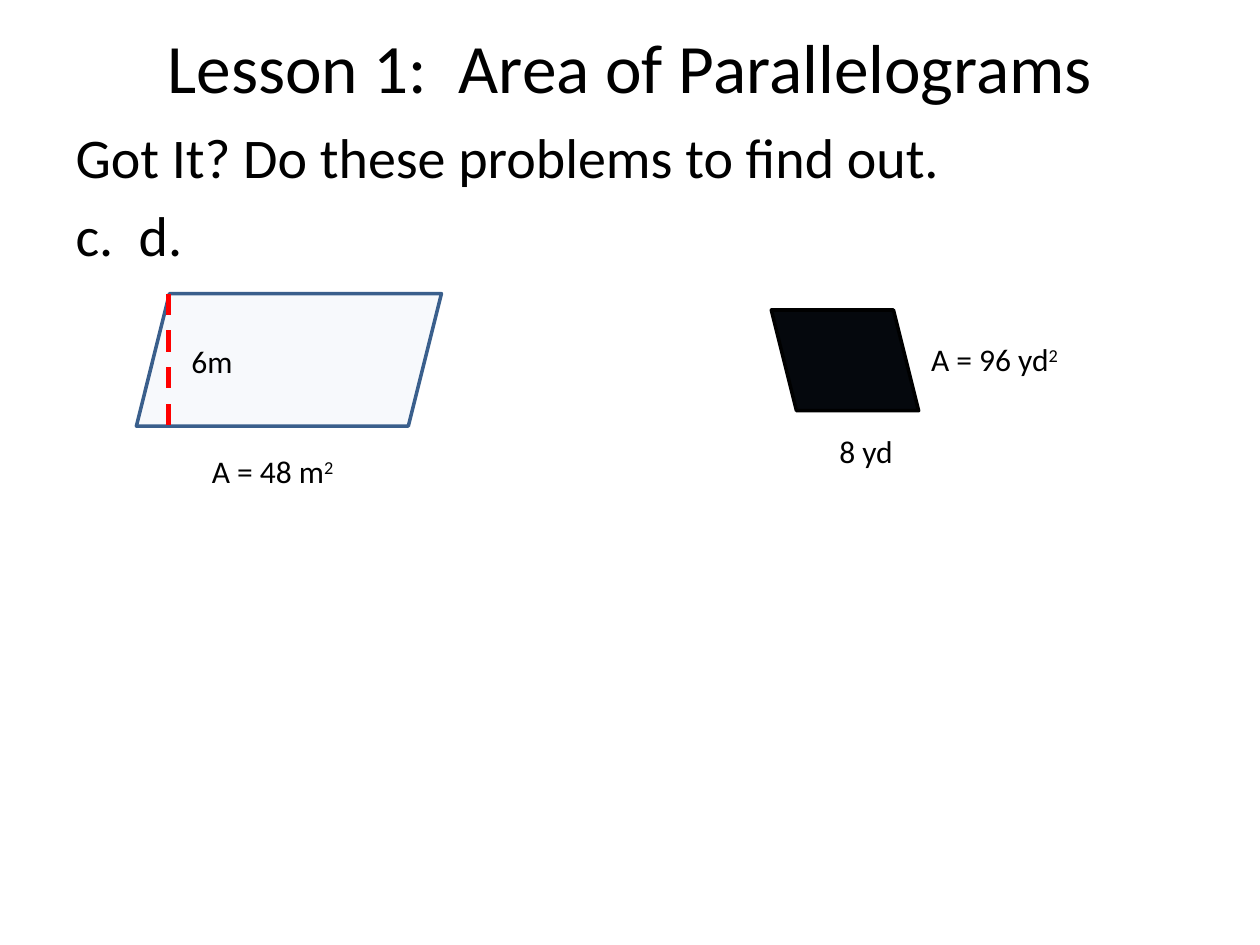
import pptx
import pptx.dml.color
import pptx.enum.dml
import pptx.enum.shapes
import pptx.enum.text
import pptx.oxml
import pptx.oxml.ns
import pptx.util
from pptx.util import Cm

FONT = "Calibri"


def colour(hex_string):
    return pptx.dml.color.RGBColor.from_string(hex_string)


def add_xml(parent, tag, **attributes):
    child = parent.makeelement(pptx.oxml.ns.qn(tag), attributes)
    parent.append(child)
    return child


def style_paragraph(paragraph, size):
    paragraph.font.name = FONT
    paragraph.font.size = pptx.util.Pt(size)
    paragraph.font.color.rgb = colour("000000")


def place(placeholder, left, top, width, height):
    placeholder.left, placeholder.top = Cm(left), Cm(top)
    placeholder.width, placeholder.height = Cm(width), Cm(height)
    placeholder.text_frame.auto_size = pptx.enum.text.MSO_AUTO_SIZE.NONE


def fill_heading(title, left, top, width, height):
    place(title, left, top, width, height)
    title.text_frame.text = "Lesson 1:  Area of Parallelograms"
    title.text_frame.vertical_anchor = pptx.enum.text.MSO_ANCHOR.MIDDLE
    heading = title.text_frame.paragraphs[0]
    heading.alignment = pptx.enum.text.PP_ALIGN.CENTER
    style_paragraph(heading, 39.6)


def fill_problem_list(body, left, top, width, height):
    place(body, left, top, width, height)
    body.text_frame.text = "Got It? Do these problems to find out.\nc.\td."
    for problem in body.text_frame.paragraphs:
        style_paragraph(problem, 32)
        properties = problem._p.get_or_add_pPr()
        properties.set("marL", "0")
        properties.set("indent", "0")
        defaults = properties.find(pptx.oxml.ns.qn("a:defRPr"))
        add_xml(properties, "a:buNone")
        tabs = add_xml(properties, "a:tabLst")
        add_xml(tabs, "a:tab", pos=str(Cm(12.75)), algn="l")
        properties.append(defaults)


def add_label(slide, text, left, top, width, exponent=""):
    label = slide.shapes.add_textbox(Cm(left), Cm(top), Cm(width), Cm(1.02))
    label.text_frame.word_wrap = True
    label.text_frame.auto_size = pptx.enum.text.MSO_AUTO_SIZE.SHAPE_TO_FIT_TEXT
    measure = label.text_frame.paragraphs[0]
    style_paragraph(measure, 18)
    measure.add_run().text = text
    if exponent:
        power = measure.add_run()
        power.text = exponent
        power._r.get_or_add_rPr().set("baseline", "30000")


def add_parallelogram(slide, left, top, width, height, fill, line):
    parallelogram = slide.shapes.add_shape(
        pptx.enum.shapes.MSO_SHAPE.PARALLELOGRAM,
        Cm(left), Cm(top), Cm(width), Cm(height))
    parallelogram.shadow.inherit = False
    parallelogram.fill.solid()
    parallelogram.fill.fore_color.rgb = colour(fill)
    parallelogram.line.color.rgb = colour(line)
    parallelogram.line.width = pptx.util.Pt(2)
    return parallelogram


def add_problem_c(slide, left, top, width, height):
    parallelogram = add_parallelogram(
        slide, left, top, width, height, "DCE6F2", "3A5F8C")
    fill_colour = parallelogram._element.spPr.find(
        ".//" + pptx.oxml.ns.qn("a:srgbClr"))
    add_xml(fill_colour, "a:alpha", val="21000")

    altitude = slide.shapes.add_connector(
        pptx.enum.shapes.MSO_CONNECTOR.STRAIGHT,
        Cm(left + 0.64), Cm(top), Cm(left + 0.64), Cm(top + height))
    altitude.line.color.rgb = colour("FF0000")
    altitude.line.width = pptx.util.Pt(3)
    altitude.line.dash_style = pptx.enum.dml.MSO_LINE.DASH
    add_xml(altitude._element.spPr, "a:effectLst")

    add_label(slide, "6m", left + 0.86, top + 0.86, 1.9)
    add_label(slide, "A = 48 m", left + 1.27, top + height + 0.4, 4.02, "2")


def add_problem_d(slide, left, top, width, height):
    parallelogram = add_parallelogram(
        slide, left, top, width, height, "05080D", "000000")
    parallelogram._element.spPr.xfrm.set("flipH", "1")
    add_label(slide, "A = 96 yd", left + width, top + 0.48, 3.6, "2")
    add_label(slide, "8 yd", left + 1.12, top + height + 0.3, 1.7)


def main():
    presentation = pptx.Presentation()
    presentation.slide_width = Cm(25.4)
    presentation.slide_height = Cm(19.05)
    slide = presentation.slides.add_slide(presentation.slide_layouts[1])
    fill_heading(slide.shapes.title, 1.27, 0.43, 22.86, 1.78)
    fill_problem_list(slide.placeholders[1], 1.27, 2.34, 22.86, 14.68)
    add_problem_c(slide, 2.75, 5.92, 6.15, 2.67)
    add_problem_d(slide, 15.55, 6.25, 2.97, 2.03)
    presentation.save("out.pptx")


if __name__ == "__main__":
    main()
